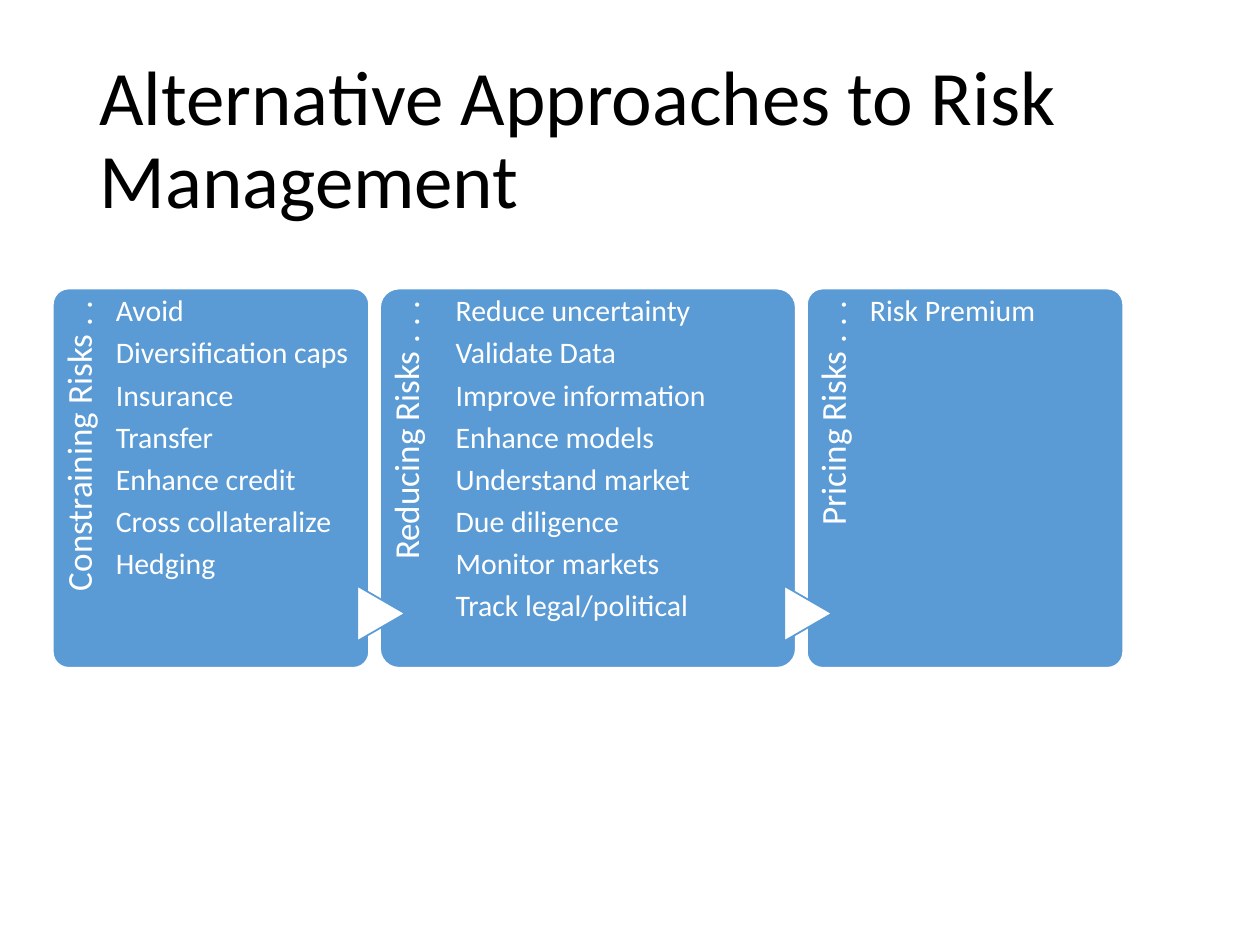
from dataclasses import dataclass

from pptx import Presentation
from pptx.dml.color import RGBColor
from pptx.enum.shapes import MSO_SHAPE
from pptx.enum.text import MSO_ANCHOR, PP_ALIGN
from pptx.util import Pt

COLORS = {"card": "5B9BD5", "white": "FFFFFF", "black": "000000"}
FONT = "Calibri"

LEFT, TOP, HEIGHT, GAP = 30.2, 164.9, 216.7, 6.3
LABEL_LENGTH = 177.8
LABEL_SHARE, BODY_SHARE = 0.2, 0.745
ARROW_W, ARROW_H, ARROW_MID_Y = 31.7, 27.4, 350.6


@dataclass
class Card:
    label: str
    items: list[str]
    width: float = 180.7
    body_offset: float = 36


CARDS = [
    Card("Constraining Risks . .",
         ["Avoid", "Diversification caps", "Insurance", "Transfer",
          "Enhance credit", "Cross collateralize", "Hedging"]),
    Card("Reducing Risks . . .",
         ["Reduce uncertainty", "Validate Data", "Improve information",
          "Enhance models", "Understand market", "Due diligence",
          "Monitor markets", "Track legal/political"],
         width=237.6, body_offset=43.2),
    Card("Pricing Risks . . .", ["Risk Premium"]),
]


def rgb(name: str) -> RGBColor:
    return RGBColor.from_string(COLORS[name])


def add_text(s, box: tuple, lines: list[str], size: float, color: str,
             insets: tuple = (7.2, 3.6, 7.2, 3.6), space_after: float = 0,
             align=PP_ALIGN.LEFT, anchor=MSO_ANCHOR.TOP):
    """Add a text box with one paragraph per line; insets run left, top, right, bottom."""
    sp = s.shapes.add_textbox(*map(Pt, box))
    tf = sp.text_frame
    tf.word_wrap = True
    tf.vertical_anchor = anchor
    tf.margin_left, tf.margin_top, tf.margin_right, tf.margin_bottom = map(Pt, insets)
    tf.text = "\n".join(lines)
    for p in tf.paragraphs:
        p.alignment = align
        p.line_spacing = 0.9
        p.space_after = Pt(space_after)
        p.font.name = FONT
        p.font.size = Pt(size)
        p.font.color.rgb = rgb(color)
    return sp


def add_panel(s, kind, box: tuple, fill: str, line: str):
    sp = s.shapes.add_shape(kind, *map(Pt, box))
    sp.shadow.inherit = False
    sp.fill.solid()
    sp.fill.fore_color.rgb = rgb(fill)
    sp.line.color.rgb = rgb(line)
    sp.line.width = Pt(1)
    return sp


def add_card(s, card: Card, left: float) -> None:
    panel = add_panel(s, MSO_SHAPE.ROUNDED_RECTANGLE,
                      (left, TOP, card.width, HEIGHT), "card", "white")
    panel.adjustments[0] = 0.05

    # The label turns about its centre, so its box is laid out unrotated.
    label_h = LABEL_SHARE * card.width
    label_box = (left + (label_h - LABEL_LENGTH) / 2,
                 TOP + (LABEL_LENGTH - label_h) / 2, LABEL_LENGTH, label_h)
    label = add_text(s, label_box, [card.label], 20, "white",
                     (0, 5, 7.2, 0), 7, PP_ALIGN.RIGHT)
    label.rotation = 270

    body_box = (left + card.body_offset, TOP, BODY_SHARE * card.width, HEIGHT)
    add_text(s, body_box, card.items, 17, "white", (0, 4.3, 0, 0), 5.7)


def add_arrow(s, mid_x: float) -> None:
    box = (mid_x - ARROW_W / 2, ARROW_MID_Y - ARROW_H / 2, ARROW_W, ARROW_H)
    sp = add_panel(s, MSO_SHAPE.FLOWCHART_EXTRACT, box, "white", "card")
    sp.rotation = 90


def main() -> None:
    prs = Presentation()
    prs.slide_width, prs.slide_height = Pt(720), Pt(540)
    s = prs.slides.add_slide(prs.slide_layouts[6])

    add_text(s, (49.7, 28.8, 620.6, 104.4),
             ["Alternative Approaches to Risk Management"], 44, "black",
             anchor=MSO_ANCHOR.MIDDLE)

    left = LEFT
    for i, card in enumerate(CARDS):
        add_card(s, card, left)
        if i:
            add_arrow(s, left + 0.7)
        left += card.width + GAP

    prs.save("out.pptx")


if __name__ == "__main__":
    main()
